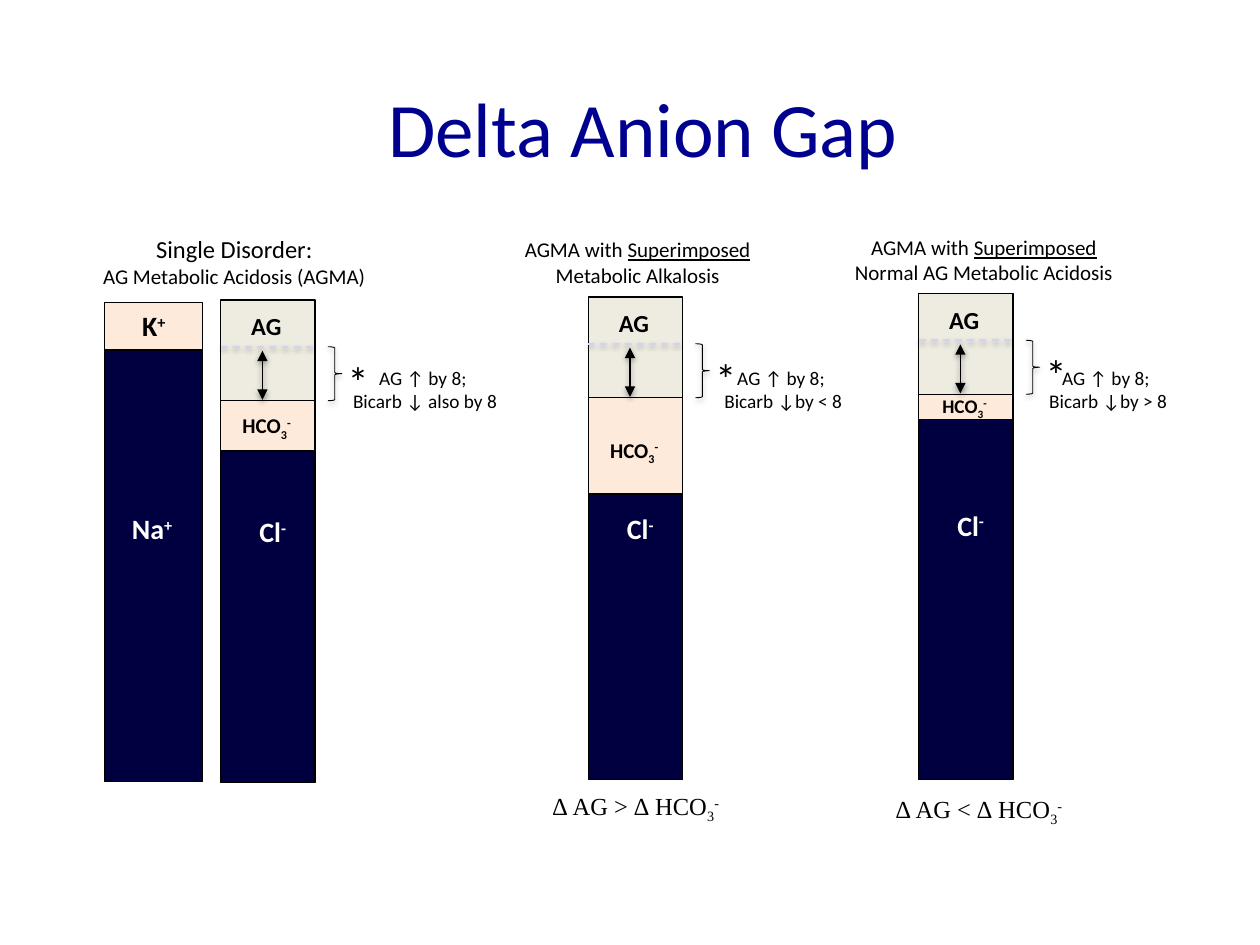
"""Build the Delta Anion Gap slide: stacked ion columns for three acid-base disorders."""
from lxml import etree
from pptx import Presentation
from pptx import util as u
from pptx.dml.color import RGBColor
from pptx.enum import dml, shapes, text
from pptx.oxml.ns import qn

THEME = {
    "sans": "Calibri", "serif": "Times New Roman",
    "title": "000090", "ink": "000000", "pale": "FFFFFF", "navy": "000040",
    "peach": "FDEADA", "stone": "EEECE1", "dash": "D2D2F4",
    "title_pt": 44, "star_pt": 24, "ion_pt": 16, "head_pt": 14,
    "body_pt": 12, "note_pt": 11, "edge_pt": 0.75, "brace_pt": 0.5, "line_pt": 1,
}
MARKS = {"sub": ("baseline", "-25000"), "sup": ("baseline", "30000"), "under": ("u", "sng")}
BICARB = [("HCO", ""), ("3", "sub"), ("-", "sup")]
CHLORIDE = [("Cl", ""), ("-", "sup")]
POTASSIUM = [("K", ""), ("+", "sup")]
SODIUM = [("Na", ""), ("+", "sup")]

TITLE = "Delta Anion Gap"
HEADING_SIZE, NOTE_SIZE, DELTA_SIZE = (6.05, 1.37), (4.04, 1.19), (4.3, 0.86)
COLUMN_WIDTH, GAP_HEIGHT, BICARB_OFFSET, NORMAL_GAP = 1.9, 2.03, 0.86, 0.94

DISORDERS = [
    {"origin": (4.45, 6.05),
     "layers": [("chloride", 9.09, 15.77), ("bicarb", 6.91, 9.09)],
     "bicarb_label": (8.2, 0.76, THEME["body_pt"]),
     "heading": (1.7, 4.6, [([("Single Disorder:", "")], THEME["head_pt"]),
                            ([("AG Metabolic Acidosis (AGMA)", "")], THEME["body_pt"])]),
     "note": (6.55, "Bicarb ↓ also by 8"), "delta": None},
    {"origin": (11.86, 5.99),
     "layers": [("chloride", 9.04, 15.72), ("bicarb", 6.86, 9.96)],
     "bicarb_label": (8.69, 1.09, THEME["body_pt"]),
     "heading": (9.83, 4.65, [([("AGMA with ", ""), ("Superimposed", "under"),
                                (" Metabolic Alkalosis", "")], THEME["body_pt"])]),
     "note": (13.77, "Bicarb ↓by < 8"), "delta": (10.77, 15.82, " ∆ AG > ∆ ")},
    {"origin": (18.52, 5.92),
     "layers": [("bicarb", 6.78, 8.59), ("chloride", 8.46, 15.72)],
     "bicarb_label": (7.82, 0.69, THEME["note_pt"]),
     "heading": (16.81, 4.6, [([("AGMA with ", ""), ("Superimposed", "under"),
                               (" Normal AG Metabolic Acidosis", "")], THEME["body_pt"])]),
     "note": (20.32, "Bicarb ↓by > 8"), "delta": (17.81, 15.88, "∆ AG < ∆ ")},
]
LAYER_FILLS = {"chloride": THEME["navy"], "bicarb": THEME["peach"]}


def cm(*lengths):
    return [u.Cm(length) for length in lengths]


def apply(target, formats):
    for name, value in formats.items():
        setattr(target, name, value)


def write(frame, lines, color="ink", face="sans", bold=False, align=text.PP_ALIGN.CENTER):
    for index, (runs, size) in enumerate(lines):
        line = frame.paragraphs[0] if index == 0 else frame.add_paragraph()
        line.alignment = align
        for words, mark in runs:
            run = line.add_run()
            run.text = words
            apply(run.font, {"name": THEME[face], "size": u.Pt(size), "bold": bold})
            run.font.color.rgb = RGBColor.from_string(THEME[color])
            if mark:
                run._r.get_or_add_rPr().set(*MARKS[mark])


def add_label(slide, box, lines, wrap=True, **style):
    frame = slide.shapes.add_textbox(*cm(*box)).text_frame
    apply(frame, {"word_wrap": wrap, "auto_size": text.MSO_AUTO_SIZE.SHAPE_TO_FIT_TEXT})
    write(frame, lines, **style)


def add_block(slide, box, fill):
    block = slide.shapes.add_shape(shapes.MSO_SHAPE.RECTANGLE, *cm(*box))
    block.shadow.inherit = False
    block.fill.solid()
    block.fill.fore_color.rgb = RGBColor.from_string(fill)
    set_line(block, THEME["ink"], THEME["edge_pt"])
    return block


def set_line(part, color, width):
    part.line.color.rgb = RGBColor.from_string(color)
    part.line.width = u.Pt(width)


def add_soft_shadow(part):
    properties = part._element.spPr
    for old in properties.findall(qn("a:effectLst")):
        properties.remove(old)
    effects = etree.SubElement(properties, qn("a:effectLst"))
    shadow = etree.SubElement(effects, qn("a:outerShdw"), blurRad="40000", dist="20000",
                              dir="5400000", rotWithShape="0")
    tint = etree.SubElement(shadow, qn("a:srgbClr"), val=THEME["ink"])
    etree.SubElement(tint, qn("a:alpha"), val="38000")


def add_rule(slide, ends, color):
    rule = slide.shapes.add_connector(shapes.MSO_CONNECTOR.STRAIGHT, *cm(*ends))
    set_line(rule, color, THEME["line_pt"])
    add_soft_shadow(rule)
    return rule


def add_gap_marks(slide, left, top):
    brace = slide.shapes.add_shape(shapes.MSO_SHAPE.RIGHT_BRACE,
                                   *cm(left + 2.16, top + NORMAL_GAP, 0.28, 1.09))
    brace.fill.background()
    set_line(brace, THEME["ink"], THEME["brace_pt"])
    add_soft_shadow(brace)
    add_label(slide, (left + 2.31, top + 0.99, 0.64, 1.3),
              [([("*", "")], THEME["star_pt"])], align=text.PP_ALIGN.LEFT)
    baseline = add_rule(slide, (left, top + NORMAL_GAP, left + COLUMN_WIDTH, top + NORMAL_GAP),
                        THEME["dash"])
    baseline.line.dash_style = dml.MSO_LINE.DASH
    add_label(slide, (left + 0.36, top + 0.1, 1.12, 0.86),
              [([("AG", "")], THEME["head_pt"])], wrap=False, bold=True)
    rise = add_rule(slide, (left + 0.84, top + 1.02, left + 0.84, top + 2.01), THEME["ink"])
    for end in ("a:headEnd", "a:tailEnd"):
        etree.SubElement(rise.line._get_or_add_ln(), qn(end), type="triangle")


def add_disorder(slide, disorder):
    left, top = disorder["origin"]
    for ion, start, stop in disorder["layers"]:
        add_block(slide, (left, start, COLUMN_WIDTH, stop - start), LAYER_FILLS[ion])
    add_block(slide, (left, top, COLUMN_WIDTH, GAP_HEIGHT), THEME["stone"])
    label_top, label_height, size = disorder["bicarb_label"]
    add_label(slide, (left, label_top, 1.85, label_height), [(BICARB, size)], bold=True)
    add_label(slide, (left + 0.53, top + 4.2, 1.17, 0.99), [(CHLORIDE, THEME["ion_pt"])],
              color="pale", bold=True, align=text.PP_ALIGN.LEFT)
    add_gap_marks(slide, left, top)
    heading_left, heading_top, heading = disorder["heading"]
    add_label(slide, (heading_left, heading_top, *HEADING_SIZE), heading)
    note_left, change = disorder["note"]
    add_label(slide, (note_left, 7.26, *NOTE_SIZE),
              [([(words, "")], THEME["note_pt"]) for words in ("AG ↑ by 8; ", change)])
    if disorder["delta"]:
        delta_left, delta_top, comparison = disorder["delta"]
        add_label(slide, (delta_left, delta_top, *DELTA_SIZE),
                  [([(comparison, ""), *BICARB], THEME["head_pt"])],
                  face="serif", align=text.PP_ALIGN.LEFT)


def add_cations(slide):
    potassium = add_block(slide, (2.11, 6.1, 1.98, 0.96), THEME["peach"])
    apply(potassium.text_frame, {"word_wrap": True, "vertical_anchor": text.MSO_ANCHOR.TOP})
    write(potassium.text_frame, [(POTASSIUM, THEME["ion_pt"])], bold=True)
    add_block(slide, (2.11, 7.06, 1.98, 8.69), THEME["navy"])
    add_label(slide, (2.34, 10.19, 1.45, 0.94), [(SODIUM, THEME["ion_pt"])],
              color="pale", bold=True)


def main():
    deck = Presentation()
    apply(deck, {"slide_width": u.Cm(25.4), "slide_height": u.Cm(19.05)})
    slide = deck.slides.add_slide(deck.slide_layouts[5])
    title = slide.shapes.title
    apply(title, dict(zip(("left", "top", "width", "height"), cm(1.27, 0.97, 23.39, 3.18))))
    title.text_frame.vertical_anchor = text.MSO_ANCHOR.MIDDLE
    write(title.text_frame, [([(TITLE, "")], THEME["title_pt"])], color="title")
    add_cations(slide)
    for disorder in DISORDERS:
        add_disorder(slide, disorder)
    deck.save("out.pptx")


if __name__ == "__main__":
    main()
